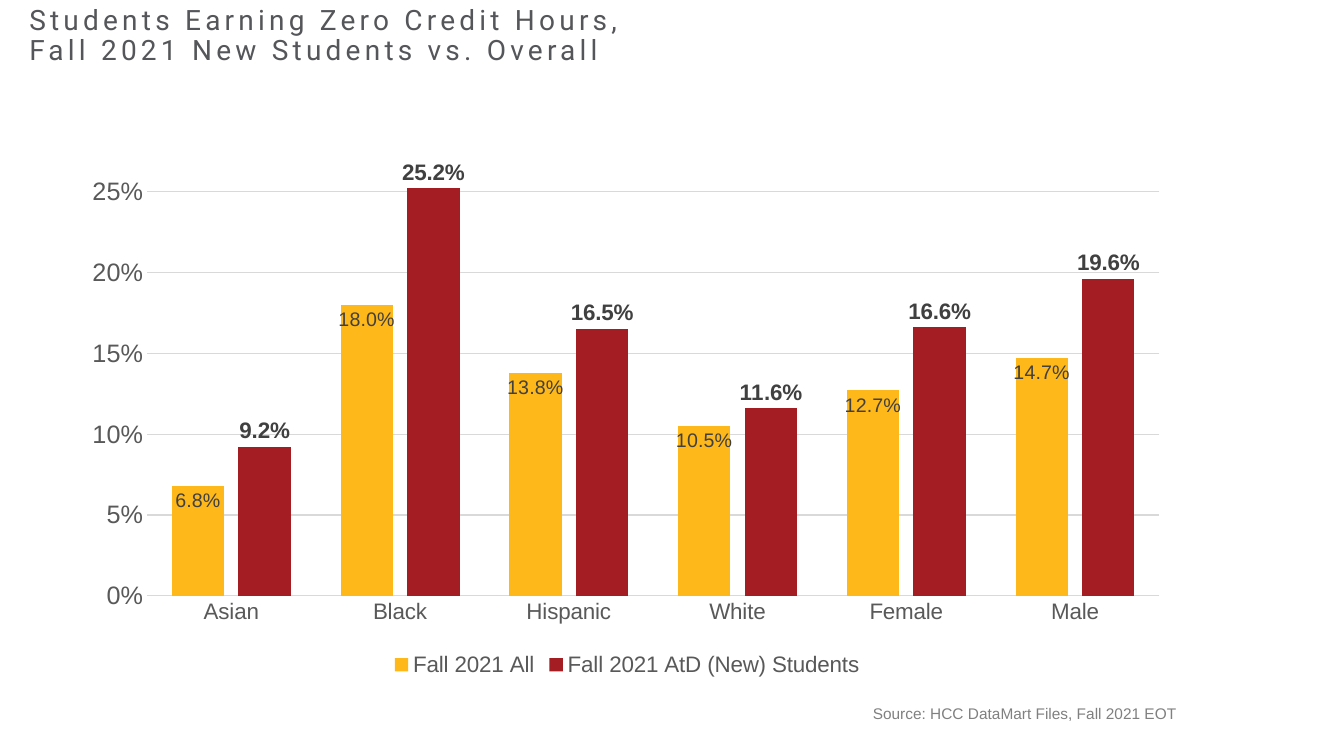
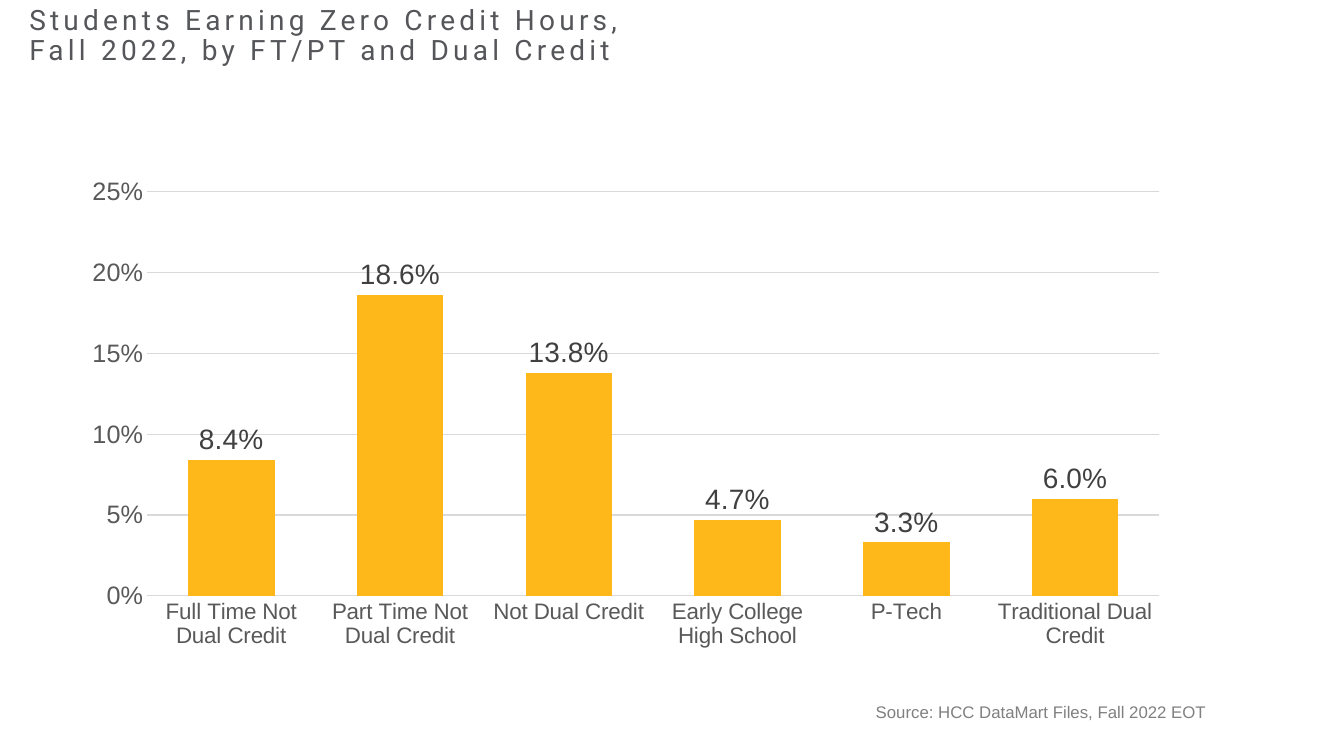
"""Build two slides charting students who earned zero credit hours."""
from dataclasses import dataclass

from lxml import etree
from pptx import Presentation
from pptx.chart.data import CategoryChartData
from pptx.dml.color import RGBColor
from pptx.enum.chart import (
    XL_CHART_TYPE as ChartType,
    XL_LABEL_POSITION as LabelPosition,
    XL_LEGEND_POSITION as LegendPosition,
    XL_TICK_MARK as TickMark,
)
from pptx.enum.text import (
    MSO_ANCHOR as Anchor,
    MSO_AUTO_SIZE as AutoSize,
    PP_ALIGN as Align,
)
from pptx.oxml.ns import qn
from pptx.util import Inches, Pt


@dataclass(frozen=True)
class Theme:
    """Colours, fonts and type sizes of the deck."""
    title_color: str = "555659"
    axis_color: str = "595959"
    label_color: str = "404040"
    source_color: str = "808080"
    grid_color: str = "D9D9D9"
    gold: str = "FFB819"
    red: str = "A31D22"
    title_font: str = "Roboto"
    body_font: str = "Arial"
    title_size: int = 20
    title_spacing: int = 3
    value_size: int = 18
    category_size: int = 16
    legend_size: int = 16


THEME = Theme()
TITLE_BOX = (0.19, 0.17, 10.13, 0.38)
CHART_BOX = (0.72, 1.33, 11, 5.43)
PLOT_AREA = {"x": 0.067, "y": 0.046, "w": 0.913, "h": 0.798}

SLIDES = [
    {
        "title": "Students Earning Zero Credit Hours,\vFall 2021 New Students vs. Overall",
        "categories": ["Asian", "Black", "Hispanic", "White", "Female", "Male"],
        "series": [
            {"name": "Fall 2021 All",
             "values": [0.068, 0.18, 0.138, 0.105, 0.127, 0.147],
             "color": THEME.gold, "label_size": 14, "bold": False,
             "position": LabelPosition.INSIDE_END},
            {"name": "Fall 2021 AtD (New) Students",
             "values": [0.092, 0.252, 0.165, 0.116, 0.166, 0.196],
             "color": THEME.red, "label_size": 16, "bold": True,
             "position": LabelPosition.OUTSIDE_END},
        ],
        "source": "Source: HCC DataMart Files, Fall 2021 EOT",
        "source_box": (6.83, 6.94, 6.67, 0.29),
        "source_size": 11,
    },
    {
        "title": "Students Earning Zero Credit Hours,\vFall 2022, by FT/PT and Dual Credit",
        "categories": ["Full Time Not Dual Credit", "Part Time Not Dual Credit",
                       "Not Dual Credit", "Early College High School",
                       "P-Tech", "Traditional Dual Credit"],
        "series": [
            {"name": "Series 1",
             "values": [0.084, 0.186, 0.138, 0.047, 0.033, 0.06],
             "color": THEME.gold, "label_size": 20, "bold": False,
             "position": LabelPosition.OUTSIDE_END},
        ],
        "source": "Source: HCC DataMart Files, Fall 2022 EOT",
        "source_box": (6.99, 6.91, 6.67, 0.3),
        "source_size": 12,
    },
]


def inches(box):
    """Turn a tuple of numbers into lengths."""
    return [Inches(number) for number in box]


def style_font(font, size, color, name=THEME.body_font, bold=False):
    """Set the look of a font."""
    font.size = Pt(size)
    font.color.rgb = RGBColor.from_string(color)
    font.name = name
    font.bold = bold


def style_line(line):
    """Give a chart line the grid look."""
    line.color.rgb = RGBColor.from_string(THEME.grid_color)
    line.width = Pt(0.75)


def add_title(page, text):
    """Place and format the title placeholder."""
    title = page.shapes.title
    title.left, title.top, title.width, title.height = inches(TITLE_BOX)
    frame = title.text_frame
    frame.text = text
    frame.auto_size = AutoSize.NONE
    frame.vertical_anchor = Anchor.MIDDLE
    para = frame.paragraphs[0]
    para.alignment = Align.LEFT
    para.line_spacing = 0.9
    for span in para.runs:
        style_font(span.font, THEME.title_size, THEME.title_color, THEME.title_font)
        span.font._element.set("spc", str(THEME.title_spacing * 100))


def add_source(page, text, box, size):
    """Add the centred source note."""
    note = page.shapes.add_textbox(*inches(box))
    frame = note.text_frame
    frame.word_wrap = True
    frame.auto_size = AutoSize.SHAPE_TO_FIT_TEXT
    frame.text = text
    para = frame.paragraphs[0]
    para.alignment = Align.CENTER
    style_font(para.runs[0].font, size, THEME.source_color)


def fix_plot_area(chart):
    """Pin the inner plot area to fixed fractions of the chart."""
    plot_area = chart.element.find(".//" + qn("c:plotArea"))
    for old in plot_area.findall(qn("c:layout")):
        plot_area.remove(old)
    layout = etree.Element(qn("c:layout"))
    manual = etree.SubElement(layout, qn("c:manualLayout"))
    settings = {"layoutTarget": "inner", "xMode": "edge", "yMode": "edge", **PLOT_AREA}
    for tag, setting in settings.items():
        etree.SubElement(manual, qn(f"c:{tag}")).set("val", str(setting))
    plot_area.insert(0, layout)


def style_axes(chart):
    """Format both axes and the gridlines."""
    category, value = chart.category_axis, chart.value_axis
    for axis, size in ((category, THEME.category_size), (value, THEME.value_size)):
        axis.major_tick_mark = axis.minor_tick_mark = TickMark.NONE
        style_font(axis.tick_labels.font, size, THEME.axis_color)
    style_line(category.format.line)
    value.format.line.fill.background()
    value.minimum_scale, value.maximum_scale, value.major_unit = 0, 0.27, 0.05
    value.has_major_gridlines = True
    style_line(value.major_gridlines.format.line)
    value.tick_labels.number_format = "0%"
    value.tick_labels.number_format_is_linked = False


def style_series(series, look):
    """Colour the columns and label their values."""
    series.format.fill.solid()
    series.format.fill.fore_color.rgb = RGBColor.from_string(look["color"])
    series.invert_if_negative = False
    labels = series.data_labels
    labels.show_value = True
    labels.number_format = "0.0%"
    labels.number_format_is_linked = False
    labels.position = look["position"]
    style_font(labels.font, look["label_size"], THEME.label_color, bold=look["bold"])


def add_columns(page, categories, series_list):
    """Add the clustered column chart."""
    data = CategoryChartData(number_format="0.0%")
    data.categories = categories
    for entry in series_list:
        data.add_series(entry["name"], entry["values"])
    chart = page.shapes.add_chart(
        ChartType.COLUMN_CLUSTERED, *inches(CHART_BOX), data).chart
    chart.font.name, chart.font.size = THEME.body_font, Pt(10)
    chart.has_title = False
    chart.has_legend = len(series_list) > 1
    if chart.has_legend:
        chart.legend.position = LegendPosition.BOTTOM
        chart.legend.include_in_layout = False
        style_font(chart.legend.font, THEME.legend_size, THEME.axis_color)
    plot = chart.plots[0]
    plot.gap_width, plot.overlap, plot.vary_by_categories = 95, -27, False
    for series, look in zip(plot.series, series_list):
        style_series(series, look)
    style_axes(chart)
    fix_plot_area(chart)


def main():
    """Build and save the deck."""
    deck = Presentation()
    deck.slide_width, deck.slide_height = Inches(13.33), Inches(7.5)
    for content in SLIDES:
        page = deck.slides.add_slide(deck.slide_layouts.get_by_name("Title Only"))
        add_columns(page, content["categories"], content["series"])
        add_title(page, content["title"])
        add_source(page, content["source"], content["source_box"], content["source_size"])
    deck.save("out.pptx")


if __name__ == "__main__":
    main()
